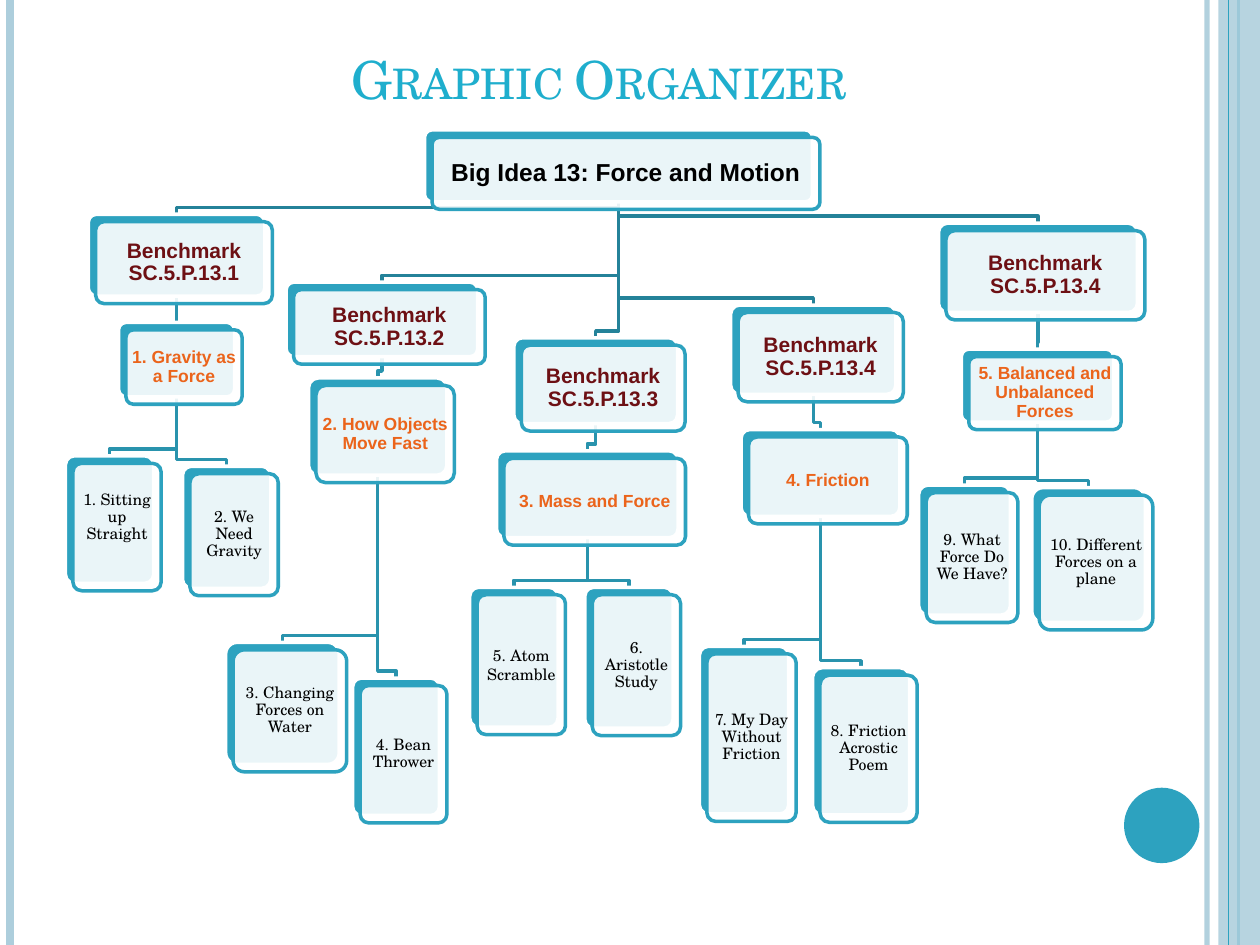
from dataclasses import dataclass, field

from lxml import etree
from pptx import Presentation
from pptx import util as u
from pptx.dml.color import RGBColor
from pptx.enum import shapes, text
from pptx.oxml.ns import qn

TEAL, PALE, WHITE, BLACK = "2DA2BF", "ADCEDC", "FFFFFF", "000000"
SERIF, SANS = "TeX Gyre Schola", "Arial"
CARD_OFFSET = 0.15  # front card against its backing, cm
BEND = 0.14         # height of a branch's last step, cm
CORNER = 0.1

# One entry per level: font, size, colour, bold, text inset in cm
LEVELS = [
    (SANS, 14, BLACK, True, 0.15),
    (SANS, 12, "6D1014", True, 0.13),
    (SANS, 10, "EB641B", True, 0.1),
    (SERIF, 9, BLACK, False, 0.1),
]


@dataclass
class Topic:
    label: str
    left: float
    top: float
    width: float
    height: float
    children: list = field(default_factory=list)
    spacing: float = 0.9
    lift: float = 0  # extra space under the label, cm

    @property
    def centre(self):
        return self.left + self.width / 2


ORGANIZER = Topic("Big Idea 13: Force and Motion", 8.56, 2.62, 7.82, 1.45, [
    Topic("Benchmark SC.5.P.13.1", 1.78, 4.32, 3.56, 1.65, [
        Topic("1. Gravity as a Force", 2.39, 6.5, 2.34, 1.5, [
            Topic("1. Sitting up Straight", 1.32, 9.19, 1.78, 2.57, lift=0.4),
            Topic("2. We Need Gravity", 3.68, 9.4, 1.78, 2.46)])]),
    Topic("Benchmark SC.5.P.13.2", 5.77, 5.69, 3.86, 1.5, [
        Topic("2. How Objects Move Fast", 6.22, 7.62, 2.79, 1.96, [
            Topic("3. Changing Forces on Water", 4.55, 12.95, 2.29, 2.46),
            Topic("4. Bean Thrower", 7.11, 13.67, 1.75, 2.77)])]),
    Topic("Benchmark SC.5.P.13.3", 10.36, 6.81, 3.3, 1.73, [
        Topic("3. Mass and Force", 10.01, 9.09, 3.66, 1.75, [
            Topic("5. Atom Scramble", 9.47, 11.84, 1.78, 2.82, spacing=1.0),
            Topic("6. Aristotle Study", 11.79, 11.84, 1.78, 2.84)])]),
    Topic("Benchmark SC.5.P.13.4", 14.73, 6.15, 3.33, 1.8, [
        Topic("4. Friction", 14.94, 8.66, 3.2, 1.75, [
            Topic("7. My Day Without Friction", 14.1, 13.03, 1.8, 3.38),
            Topic("8. Friction Acrostic Poem", 16.38, 13.46, 1.96, 2.97)])]),
    Topic("Benchmark SC.5.P.13.4", 18.92, 4.5, 4.01, 1.8, [
        Topic("5. Balanced and Unbalanced Forces", 19.38, 7.04, 3.07, 1.47, [
            Topic("9. What Force Do We Have?", 18.52, 9.78, 1.85, 2.62),
            Topic("10. Different Forces on a plane", 20.8, 9.83, 2.29, 2.72)])]),
])


def paint(color_format, hex_color, opacity=100):
    color_format.rgb = RGBColor.from_string(hex_color)
    if opacity < 100:
        srgb = color_format._xFill.find(qn("a:srgbClr"))
        etree.SubElement(srgb, qn("a:alpha"), val=str(opacity * 1000))


def paint_line(line, hex_color, points, opacity=100):
    line.fill.solid()
    paint(line.fill.fore_color, hex_color, opacity)
    line.width = u.Pt(points)


def add_block(slide, kind, left, top, width, height, fill, opacity=100, outline=None):
    block = slide.shapes.add_shape(
        kind, u.Cm(left), u.Cm(top), u.Cm(width), u.Cm(height))
    block.shadow.inherit = False
    block.fill.solid()
    paint(block.fill.fore_color, fill, opacity)
    if outline:
        paint_line(block.line, outline, 2)
    else:
        block.line.fill.background()
    return block


def add_rule(slide, x, points, color, opacity=100):
    rule = slide.shapes.add_connector(
        shapes.MSO_CONNECTOR.STRAIGHT, u.Cm(x), 0, u.Cm(x), u.Cm(19.05))
    etree.SubElement(rule._element.spPr, qn("a:effectLst"))
    paint_line(rule.line, color, points, opacity)


def add_frame(slide):
    add_rule(slide, 24.33, 3, PALE, 93)
    add_rule(slide, 0.2, 4.5, PALE)
    add_rule(slide, 24.97, 1.5, TEAL)
    add_block(slide, shapes.MSO_SHAPE.RECTANGLE, 24.56, 0, 0.84, 19.05, PALE, 87)
    add_rule(slide, 24.77, 0.75, TEAL)
    add_block(slide, shapes.MSO_SHAPE.OVAL, 22.66, 15.88, 1.52, 1.52, TEAL)


def set_title(slide, words):
    title = slide.shapes.title
    title.left, title.top = u.Cm(1.7), u.Cm(0)
    title.width, title.height = u.Cm(20.75), u.Cm(2.34)
    frame = title.text_frame
    frame.text = words
    frame.auto_size = text.MSO_AUTO_SIZE.NONE
    frame.vertical_anchor = text.MSO_ANCHOR.BOTTOM
    heading = frame.paragraphs[0]
    heading.alignment = text.PP_ALIGN.CENTER
    heading.font.name, heading.font.size = SERIF, u.Pt(30)
    paint(heading.font.color, "1FAECD")
    heading.runs[0]._r.get_or_add_rPr().set("cap", "small")


def add_branch(slide, parent, child, color):
    """Line that drops from the parent and steps sideways just above the child."""
    step = child.top - BEND
    corners = [(parent.centre, step), (child.centre, step), (child.centre, child.top)]
    outline = slide.shapes.build_freeform(
        u.Cm(parent.centre), u.Cm(parent.top + parent.height))
    outline.add_line_segments([(u.Cm(x), u.Cm(y)) for x, y in corners], close=False)
    branch = outline.convert_to_shape()
    branch.shadow.inherit = False
    branch.fill.background()
    paint_line(branch.line, color, 2)


def add_branches(slide, topic, level=0):
    for child in topic.children:
        add_branches(slide, child, level + 1)
        add_branch(slide, topic, child, "2993AD" if level else "248299")


def add_card(slide, topic, level):
    rounded = shapes.MSO_SHAPE.ROUNDED_RECTANGLE
    size = topic.width, topic.height
    backing = add_block(slide, rounded, topic.left, topic.top, *size, TEAL, outline=WHITE)
    card = add_block(slide, rounded, topic.left + CARD_OFFSET, topic.top + CARD_OFFSET,
                     *size, WHITE, 90, TEAL)
    backing.adjustments[0] = card.adjustments[0] = CORNER

    # Label; the rounded corners already push the text in a little
    font_name, points, color, bold, inset = LEVELS[level]
    margin = max(0, inset - 0.29 * CORNER * min(size))
    frame = card.text_frame
    frame.word_wrap = True
    frame.vertical_anchor = text.MSO_ANCHOR.MIDDLE
    frame.margin_left = frame.margin_right = frame.margin_top = u.Cm(margin)
    frame.margin_bottom = u.Cm(margin + topic.lift)
    frame.text = topic.label
    label = frame.paragraphs[0]
    label.alignment = text.PP_ALIGN.CENTER
    label.line_spacing = topic.spacing
    label.font.name, label.font.size, label.font.bold = font_name, u.Pt(points), bold
    paint(label.font.color, color)


def add_cards(slide, topic, level=0):
    add_card(slide, topic, level)
    for child in topic.children:
        add_cards(slide, child, level + 1)


def main():
    deck = Presentation()
    deck.slide_width, deck.slide_height = u.Cm(25.4), u.Cm(19.05)
    slide = deck.slides.add_slide(deck.slide_layouts[5])
    add_frame(slide)
    set_title(slide, "Graphic Organizer")
    add_branches(slide, ORGANIZER)
    add_cards(slide, ORGANIZER)
    deck.save("out.pptx")


if __name__ == "__main__":
    main()
